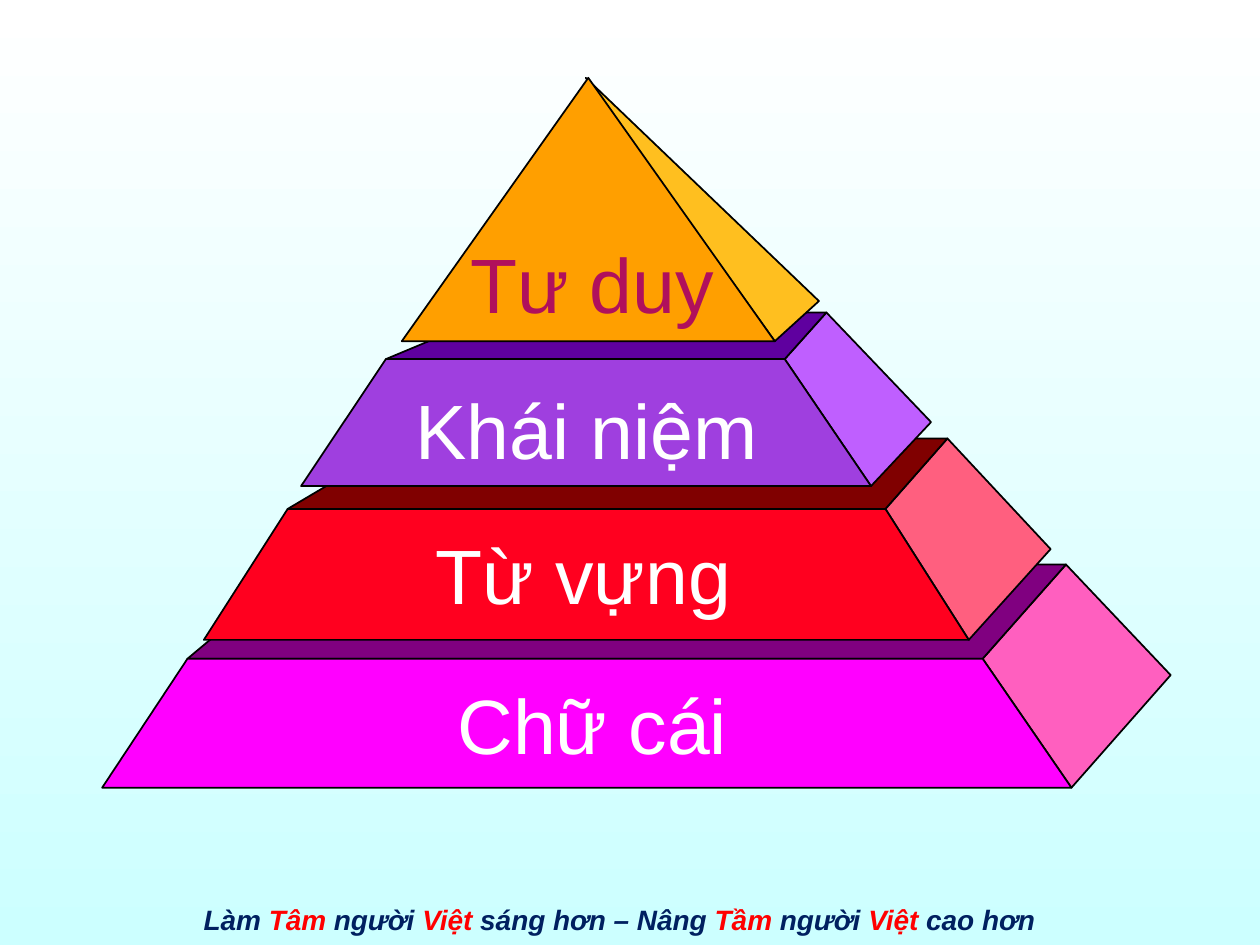
from dataclasses import dataclass

from pptx import Presentation
from pptx.dml.color import RGBColor
from pptx.enum.text import PP_ALIGN
from pptx.util import Cm, Pt


@dataclass(frozen=True)
class Theme:
    font: str = "Arial"
    label_size: int = 44
    motto_size: int = 16
    outline_width: int = 1
    outline: str = "000000"
    background_top: str = "FFFFFF"
    background_bottom: str = "CCFFFF"
    label: str = "FFFFFF"
    peak_label: str = "B0105C"
    motto: str = "002060"
    motto_accent: str = "FF0000"
    peak_side: str = "FFBF1F"
    peak_front: str = "FF9F00"
    # Side, top and front colour of each tier, from the bottom up
    tiers: tuple = (
        ("FF5FBF", "800080", "FF00FF"),
        ("FF5F7F", "800000", "FF001F"),
        ("BF5FFF", "5F009F", "9F3FDF"),
    )


@dataclass(frozen=True)
class Tier:
    """Edges are (left, right, y) and the far corner is (x, y), in cm."""
    front_top: tuple
    front_bottom: tuple
    back_top: tuple
    far_corner: tuple


class PyramidSlide:
    def __init__(self, slide, theme):
        self.slide = slide
        self.theme = theme

    def background(self):
        fill = self.slide.background.fill
        fill.gradient()
        fill.gradient_angle = 270
        colors = (self.theme.background_top, self.theme.background_bottom)
        for stop, color in zip(fill.gradient_stops, colors):
            stop.color.rgb = RGBColor.from_string(color)

    def face(self, corners, color):
        start, *others = [(Cm(x), Cm(y)) for x, y in corners]
        builder = self.slide.shapes.build_freeform(*start)
        builder.add_line_segments(others, close=True)
        shape = builder.convert_to_shape()
        shape.shadow.inherit = False
        shape.fill.solid()
        shape.fill.fore_color.rgb = RGBColor.from_string(color)
        shape.line.color.rgb = RGBColor.from_string(self.theme.outline)
        shape.line.width = Pt(self.theme.outline_width)

    def tier(self, tier, colors):
        left, right, top = tier.front_top
        bottom_left, bottom_right, bottom = tier.front_bottom
        back_left, back_right, back = tier.back_top
        faces = (
            [(bottom_right, bottom), (right, top), (back_right, back), tier.far_corner],
            [(left, top), (right, top), (back_right, back), (back_left, back)],
            [(left, top), (right, top), (bottom_right, bottom), (bottom_left, bottom)],
        )
        for corners, color in zip(faces, colors):
            self.face(corners, color)

    def text(self, box, runs, size, emphasis=False):
        text_box = self.slide.shapes.add_textbox(*map(Cm, box))
        text_box.text_frame.word_wrap = True
        paragraph = text_box.text_frame.paragraphs[0]
        paragraph.alignment = PP_ALIGN.CENTER
        for text, color in runs:
            run = paragraph.add_run()
            run.text = text
            run.font.name = self.theme.font
            run.font.size = Pt(size)
            run.font.bold = run.font.italic = emphasis
            run.font.color.rgb = RGBColor.from_string(color)


TIERS = (
    Tier((3.78, 19.81, 13.28), (2.06, 21.6, 15.88), (6.05, 21.49, 11.38), (23.6, 13.61)),
    Tier((5.8, 17.85, 10.26), (4.11, 19.53, 12.9), (8.2, 19.1, 8.84), (21.18, 11.07)),
    Tier((7.78, 15.82, 7.24), (6.07, 17.56, 9.8), (10.03, 16.66, 6.3), (18.77, 8.51)),
)


def main():
    theme = Theme()
    presentation = Presentation()
    presentation.slide_width = Cm(25.4)
    presentation.slide_height = Cm(19.05)
    blank_layout = presentation.slide_layouts[6]
    pyramid = PyramidSlide(presentation.slides.add_slide(blank_layout), theme)
    pyramid.background()

    # Motto at the foot of the slide
    motto = (
        ("Làm ", theme.motto),
        ("Tâm ", theme.motto_accent),
        ("người ", theme.motto),
        ("Việt", theme.motto_accent),
        (" sáng hơn – Nâng ", theme.motto),
        ("Tầm", theme.motto_accent),
        (" người ", theme.motto),
        ("Việt", theme.motto_accent),
        (" cao hơn", theme.motto),
    )
    pyramid.text((1.27, 18.06, 22.43, 0.94), motto, theme.motto_size, emphasis=True)

    # Pyramid, from the bottom tier to the peak
    for tier, colors in zip(TIERS, theme.tiers):
        pyramid.tier(tier, colors)
    pyramid.face([(15.62, 6.88), (16.51, 6.07), (11.81, 1.57)], theme.peak_side)
    pyramid.face([(8.1, 6.88), (15.62, 6.88), (11.86, 1.57)], theme.peak_front)

    # Level names
    labels = (
        ("Chữ cái", 7.92, 13.54, 8.05, theme.label),
        ("Từ vựng", 7.14, 10.52, 9.25, theme.label),
        ("Khái niệm", 7.92, 7.59, 7.82, theme.label),
        ("Tư duy", 8.79, 4.65, 6.3, theme.peak_label),
    )
    for name, left, top, width, color in labels:
        pyramid.text((left, top, width, 2.13), [(name, color)], theme.label_size)

    presentation.save("out.pptx")


if __name__ == "__main__":
    main()
